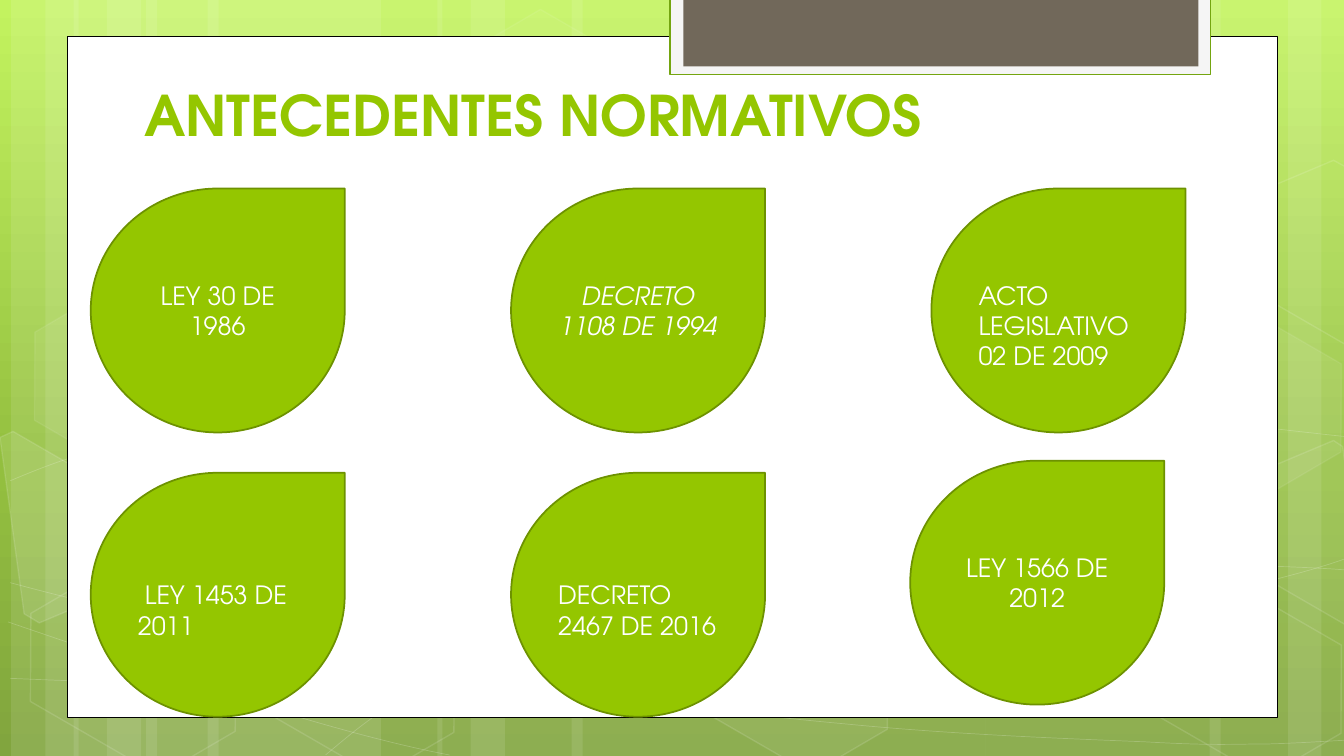
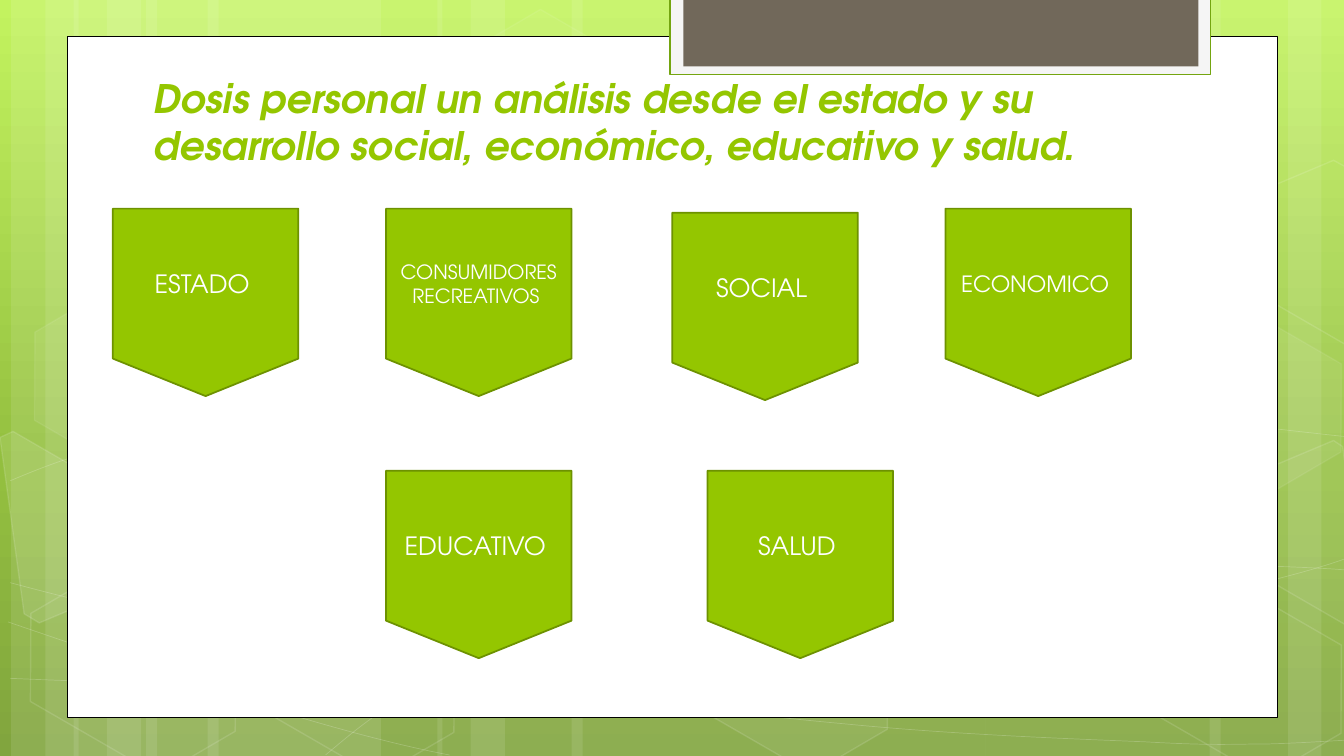
from copy import deepcopy

from pptx import Presentation
from pptx.dml.color import RGBColor
from pptx.enum.shapes import MSO_SHAPE as Preset
from pptx.enum.text import MSO_ANCHOR as Anchor, MSO_AUTO_SIZE as AutoSize, PP_ALIGN as Align
from pptx.oxml.ns import qn
from pptx.util import Inches, Pt
from lxml.etree import SubElement

FONT = "TeX Gyre Adventor"
COLORS = {
    "white": "FFFFFF", "black": "000000", "green": "94C600", "dark_green": "6D9200",
    "tab": "F5F5F5", "tab_line": "74A510", "tab_core": "71685A",
}
SKY = [(0, "C3F35F"), (0.62, "93BF3F"), (1, "81A53E")]

# Backdrop: (left, width) of the light stripes
STRIPES = [(1.45, 2.33), (0.11, 0.67), (0.45, 1.11), (2.06, 2.33), (0.73, 0.67), (1.06, 1.11),
           (9.78, 2.33), (12.78, 0.67), (12, 1.11), (5.67, 4.11), (4.34, 0.67), (4.67, 1.11)]
# Backdrop: cubic curves, a start point and then three points per segment
CURVES = [
    [(0.1, 6.73), (0.82, 6.76), (1.54, 6.79), (2.54, 6.78), (3.54, 6.77), (4.77, 6.75),
     (6.1, 6.65), (7.44, 6.55), (9.33, 6.36), (10.55, 6.17), (11.78, 5.98), (13.03, 5.68),
     (13.43, 5.51)],
    [(0.1, 4.77), (0.48, 4.61), (0.86, 4.46), (1.62, 4.31), (2.38, 4.16), (3.45, 3.94),
     (4.63, 3.87), (5.82, 3.8), (7.25, 3.79), (8.72, 3.87), (10.19, 3.95), (12.63, 4.26),
     (13.43, 4.34)],
    [(0.08, 6.17), (1.69, 6.72), (3.3, 7.27), (4.46, 7.49)],
    [(0.1, 5.78), (0.51, 5.89), (0.93, 6), (1.71, 6.16), (2.48, 6.31), (3.64, 6.56),
     (4.75, 6.73), (5.86, 6.9), (7.27, 7.08), (8.37, 7.18), (9.48, 7.29), (10.66, 7.33),
     (11.37, 7.36), (12.07, 7.4), (12.25, 7.38), (12.6, 7.38), (12.94, 7.37), (13.19, 7.35),
     (13.43, 7.34)],
    [(3.23, 7.49), (3.47, 7.29), (3.7, 7.09), (4.03, 6.91), (4.35, 6.73), (4.8, 6.53),
     (5.17, 6.39), (5.54, 6.25), (5.77, 6.19), (6.26, 6.09), (6.75, 5.99), (7.65, 5.85),
     (8.11, 5.78), (8.58, 5.71), (8.65, 5.71), (9.07, 5.69), (9.48, 5.66), (10.13, 5.63),
     (10.59, 5.62), (11.05, 5.61), (11.82, 5.62), (11.82, 5.62), (12.1, 5.62), (12.4, 5.62),
     (12.7, 5.62), (12.95, 5.63), (13.17, 5.64), (13.29, 5.65), (13.41, 5.66), (13.37, 5.65),
     (13.41, 5.66)],
]
# Backdrop: (left, top, fill opacity, line opacity) of the tilted hexagons
HEXAGONS = [(4.45, 0.36, 4, 8), (6.62, 5.89, 6, 12), (0.15, 5.91, 0, 12), (0.19, 3.12, 7, 8),
            (2.32, 5.92, 0, 12), (11.12, 5.93, 0, 12), (11.12, 3.14, 7, 8)]
# Backdrop: (fill opacity, corners) of the hexagons cut by the slide edge
CUT_HEXAGONS = [
    (10, [(0, 4.34), (0.13, 4.28), (1.15, 4.87), (1.27, 5.81), (0.39, 6.18), (0.24, 6.09)]),
    (4, [(12.35, 4.74), (13.23, 4.37), (13.32, 4.43), (13.57, 6.25), (13.49, 6.28),
         (12.47, 5.69)]),
    (0, [(12.35, 1.96), (13.23, 1.59), (13.34, 1.65), (13.57, 3.46), (13.49, 3.5),
         (12.47, 2.91)]),
]


def color(name):
    return RGBColor.from_string(COLORS[name])


def set_opacity(holder, percent):
    if percent < 100:
        for tint in holder.iter(qn("a:srgbClr")):
            SubElement(tint, qn("a:alpha"), val=str(percent * 1000))


def paint(shape, fill=None, line=None, width=1.0, fill_opacity=100, line_opacity=100):
    shape.shadow.inherit = False
    props = shape.element.spPr
    if fill and fill_opacity:
        shape.fill.solid()
        shape.fill.fore_color.rgb = color(fill)
        set_opacity(props.find(qn("a:solidFill")), fill_opacity)
    else:
        shape.fill.background()
    if line:
        shape.line.color.rgb = color(line)
        shape.line.width = Pt(width)
        set_opacity(props.find(qn("a:ln")), line_opacity)
    else:
        shape.line.fill.background()
    return shape


def add_preset(shapes, preset, box):
    return shapes.add_shape(preset, *(Inches(length) for length in box))


def add_outline(shapes, points, close):
    corners = [(Inches(x), Inches(y)) for x, y in points]
    builder = shapes.build_freeform(*corners[0])
    builder.add_line_segments(corners[1:], close=close)
    return builder.convert_to_shape()


def add_curve(shapes, points):
    """Outline whose steps are joined, three at a time, into cubic segments."""
    curve = add_outline(shapes, points, False)
    track = next(curve.element.iter(qn("a:path")))
    steps = track.findall(qn("a:lnTo"))
    for first in range(0, len(steps), 3):
        cubic = SubElement(track, qn("a:cubicBezTo"))
        for step in steps[first:first + 3]:
            cubic.append(step[0])
            track.remove(step)
    return curve


def add_pattern(shapes):
    for left, width in STRIPES:
        paint(add_preset(shapes, Preset.RECTANGLE, (left, 0, width, 7.5)), "white",
              fill_opacity=10)
    for points in CURVES:
        paint(add_curve(shapes, points), line="white", width=0.5, line_opacity=20)
    for left, top, fill_opacity, line_opacity in HEXAGONS:
        hexagon = add_preset(shapes, Preset.HEXAGON, (left, top, 2.34, 1.52))
        hexagon.adjustments[0] = 0.285
        hexagon.rotation = 30
        paint(hexagon, "white", "white", 1, fill_opacity, line_opacity)
    for fill_opacity, corners in CUT_HEXAGONS:
        paint(add_outline(shapes, corners, True), "white", "white", 1, fill_opacity, 12)


def add_panel(shapes, box):
    """White sheet with the brown tab hanging over its top edge."""
    left, top, width, height = box
    paint(add_preset(shapes, Preset.RECTANGLE, box), "white", "black", 0.5)
    tab_left, tab_top = left + 5.98, top - 0.38
    paint(add_preset(shapes, Preset.RECTANGLE, (tab_left, tab_top, 5.36, 0.76)),
          "tab", "tab_line", 1.25)
    paint(add_preset(shapes, Preset.RECTANGLE, (tab_left + 0.13, tab_top, 5.11, 0.68)),
          "tab_core")


def set_backdrop(layout, slide):
    """Draw the shared backdrop and hand it to the layout."""
    fill = layout.background.fill
    fill.gradient()
    fill.gradient_angle = 270
    stop_list = next(layout.element.iter(qn("a:gsLst")))
    stop_list.append(deepcopy(stop_list[-1]))
    for stop, (position, tone) in zip(fill.gradient_stops, SKY):
        stop.position = position
        stop.color.rgb = RGBColor.from_string(tone)

    add_pattern(slide.shapes.add_group_shape().shapes)
    add_panel(slide.shapes, (0.67, 0.36, 12, 6.76))
    parts = [shape.element for shape in slide.shapes if not shape.is_placeholder]
    for index, part in enumerate(parts, 2):
        layout.shapes.element.insert(index, part)
    for number, props in enumerate(layout.element.iter(qn("p:cNvPr")), 1):
        props.set("id", str(number))


def add_run(paragraph, text, size, tone, bold=False, italic=False):
    run = paragraph.add_run()
    run.text = text
    font = run.font
    font.name, font.size, font.bold, font.italic = FONT, Pt(size), bold, italic
    font.color.rgb = color(tone)


def set_title(slide, text, box, size, italic=False):
    title = slide.shapes.title
    title.left, title.top, title.width, title.height = (Inches(length) for length in box)
    frame = title.text_frame
    frame.word_wrap = True
    frame.auto_size = AutoSize.NONE
    frame.vertical_anchor = Anchor.BOTTOM
    # One line of room is kept under the title
    frame.margin_bottom = Inches(0.05) + Pt(size * 1.2)
    paragraph = frame.paragraphs[0]
    paragraph.alignment = Align.LEFT
    add_run(paragraph, text, size, "green", bold=True, italic=italic)


def add_card(slide, preset, box, text, size=18, italic=False, lowered=False, indent=0):
    """Green shape; a lowered card has left-aligned text, half a line down."""
    card = paint(add_preset(slide.shapes, preset, box), "green", "dark_green", 1.25)
    frame = card.text_frame
    frame.word_wrap = True
    frame.vertical_anchor = Anchor.MIDDLE
    paragraph = frame.paragraphs[0]
    paragraph.alignment = Align.LEFT if lowered else Align.CENTER
    if lowered:
        frame.margin_top = Inches(0.35)
    if indent:
        paragraph._p.get_or_add_pPr().set("indent", str(Inches(indent)))
    add_run(paragraph, text, size, "white", italic=italic)


def fill_laws_slide(slide):
    set_title(slide, "ANTECEDENTES NORMATIVOS", (1.33, 0.69, 9.68, 1.49), 40)
    left, top, column_step, row_step = 0.9, 1.87, 4.17, 2.82
    laws = [  # column, row, text, options
        (0, 0, "LEY 30 DE 1986", {}),
        (1, 0, "DECRETO 1108 DE 1994 ", {"italic": True}),
        (2, 0, "ACTO LEGISLATIVO 02 DE 2009", {"lowered": True}),
        (0, 1, "LEY 1453 DE 2011", {"lowered": True, "indent": 0.07}),
        (1, 1, "DECRETO 2467 DE 2016", {"lowered": True}),
    ]
    for column, row, law, options in laws:
        box = (left + column * column_step, top + row * row_step, 2.52, 2.42)
        add_card(slide, Preset.TEAR, box, law, **options)
    # The last law sits off the grid
    add_card(slide, Preset.TEAR, (9.03, 4.57, 2.52, 2.42), "LEY 1566 DE 2012")


def fill_dose_slide(slide):
    set_title(slide, "Dosis personal un análisis desde el estado y su desarrollo social, "
              "económico, educativo y salud. ", (1.42, 0.7, 9.68, 1.49), 28, italic=True)
    areas = [  # left, top, text, size
        (1.12, 2.07, "ESTADO ", 18),
        (3.83, 2.07, "CONSUMIDORES RECREATIVOS ", 14),
        (6.67, 2.11, "SOCIAL ", 18),
        (9.38, 2.07, "ECONOMICO ", 16),
        (3.83, 4.67, "EDUCATIVO ", 18),
        (7.02, 4.67, "SALUD ", 18),
    ]
    for left, top, area, size in areas:
        add_card(slide, Preset.FLOWCHART_OFFPAGE_CONNECTOR, (left, top, 1.84, 1.86), area, size)


def main():
    deck = Presentation()
    deck.slide_height = Inches(7.5)
    deck.slide_width = deck.slide_height * 16 // 9
    layout = deck.slide_layouts[5]
    laws_slide, dose_slide = (deck.slides.add_slide(layout) for _ in range(2))
    set_backdrop(layout, laws_slide)
    fill_laws_slide(laws_slide)
    fill_dose_slide(dose_slide)
    deck.save("out.pptx")


if __name__ == "__main__":
    main()
